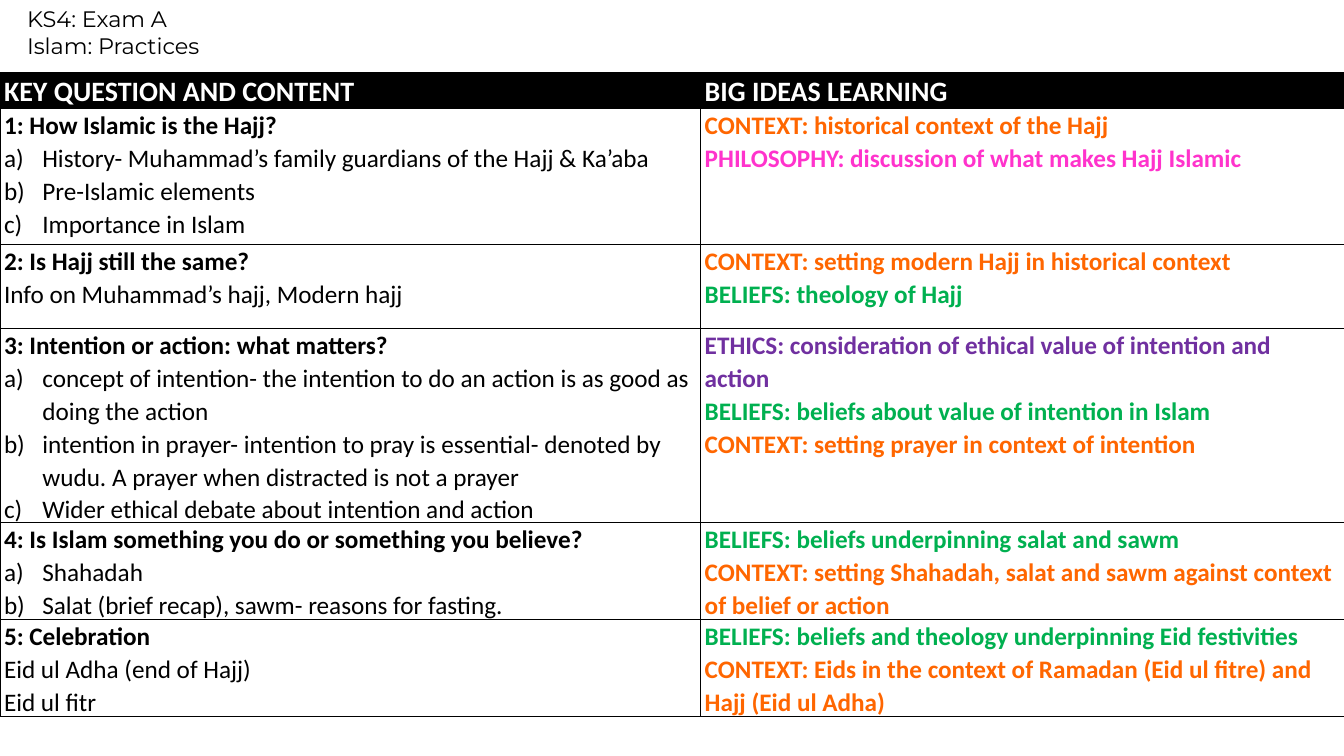
from lxml.etree import SubElement
from pptx import Presentation
from pptx.dml.color import RGBColor
from pptx.enum.text import MSO_ANCHOR, MSO_AUTO_SIZE
from pptx.oxml.ns import qn
from pptx.util import Inches, Pt

COLOURS = {
    "black": "000000",
    "white": "FFFFFF",
    "CONTEXT": "FF6600",
    "PHILOSOPHY": "FF33CC",
    "BELIEFS": "00B050",
    "ETHICS": "7030A0",
}
COLUMN_WIDTHS = (6.95, 6.38)
ROW_HEIGHTS = (0.35, 1.35, 0.83, 1.92, 0.96, 0.96)
HEADERS = ("KEY QUESTION AND CONTENT", "BIG IDEAS LEARNING")
LESSONS = [
    {
        "question": "1: How Islamic is the Hajj?",
        "lettered": True,
        "content": [
            "History- Muhammad’s family guardians of the Hajj & Ka’aba",
            "Pre-Islamic elements",
            "Importance in Islam",
        ],
        "ideas": [
            "CONTEXT: historical context of the Hajj",
            "PHILOSOPHY: discussion of what makes Hajj Islamic",
        ],
    },
    {
        "question": "2: Is Hajj still the same?",
        "lettered": False,
        "content": ["Info on Muhammad’s hajj, Modern hajj"],
        "ideas": [
            "CONTEXT: setting modern Hajj in historical context",
            "BELIEFS: theology of Hajj",
        ],
    },
    {
        "question": "3: Intention or action: what matters?",
        "lettered": True,
        "content": [
            "concept of intention- the intention to do an action is as good as doing the action",
            "intention in prayer- intention to pray is essential- denoted by wudu. "
            "A prayer when distracted is not a prayer",
            "Wider ethical debate about intention and action",
        ],
        "ideas": [
            "ETHICS: consideration of ethical value of intention and action",
            "BELIEFS: beliefs about value of intention in Islam",
            "CONTEXT: setting prayer in context of intention",
        ],
    },
    {
        "question": "4: Is Islam something you do or something you believe?",
        "lettered": True,
        "content": ["Shahadah", "Salat (brief recap), sawm- reasons for fasting."],
        "ideas": [
            "BELIEFS: beliefs underpinning salat and sawm",
            "CONTEXT: setting Shahadah, salat and sawm against context of belief or action",
        ],
    },
    {
        "question": "5: Celebration",
        "lettered": False,
        "content": ["Eid ul Adha (end of Hajj)", "Eid ul fitr"],
        "ideas": [
            "BELIEFS: beliefs and theology underpinning Eid festivities",
            "CONTEXT: Eids in the context of Ramadan (Eid ul fitre) and Hajj (Eid ul Adha)",
        ],
    },
]


def write(tf, text, size=18, font="Calibri", colour="black", bold=False, spacing=1.07, lettered=False):
    """Add one formatted paragraph, filling the first one if it is empty."""
    p = tf.paragraphs[0] if not tf.text else tf.add_paragraph()
    p.line_spacing = spacing
    if lettered:
        pPr = p._p.get_or_add_pPr()
        pPr.set("marL", str(Inches(0.38)))
        pPr.set("indent", str(-Inches(0.38)))
        SubElement(pPr, qn("a:buFont"), typeface="+mj-lt")
        SubElement(pPr, qn("a:buAutoNum"), type="alphaLcParenR")
    r = p.add_run()
    r.text = text
    r.font.size = Pt(size)
    r.font.name = font
    r.font.bold = bold
    r.font.color.rgb = RGBColor.from_string(COLOURS[colour])


def add_unit_label(slide, lines):
    """Add the unit label above the table."""
    box = slide.shapes.add_textbox(Inches(0.17), Inches(0), Inches(2.2), Inches(0.64))
    tf = box.text_frame
    tf.word_wrap = False
    tf.auto_size = MSO_AUTO_SIZE.SHAPE_TO_FIT_TEXT
    tf.vertical_anchor = MSO_ANCHOR.MIDDLE
    for line in lines:
        write(tf, line, size=16, font="Montserrat", spacing=1.0)


def style_cell(cell, fill=None):
    """Set a cell's margins, thin black borders and fill."""
    cell.margin_left = cell.margin_right = Inches(0.04)
    cell.margin_top = cell.margin_bottom = 0
    tcPr = cell._tc.get_or_add_tcPr()
    for side in ("lnL", "lnR", "lnT", "lnB"):
        ln = SubElement(tcPr, qn(f"a:{side}"), w=str(Pt(0.5)))
        SubElement(SubElement(ln, qn("a:solidFill")), qn("a:srgbClr"), val=COLOURS["black"])
    if fill:
        cell.fill.solid()
        cell.fill.fore_color.rgb = RGBColor.from_string(COLOURS[fill])
    else:
        cell.fill.background()


def add_lesson_table(slide):
    """Add the table of key questions and big ideas."""
    frame = slide.shapes.add_table(
        len(ROW_HEIGHTS), len(COLUMN_WIDTHS), Inches(0), Inches(0.72),
        Inches(sum(COLUMN_WIDTHS)), Inches(sum(ROW_HEIGHTS)),
    )
    table = frame.table
    table.horz_banding = False
    for column, width in zip(table.columns, COLUMN_WIDTHS):
        column.width = Inches(width)
    for row, height in zip(table.rows, ROW_HEIGHTS):
        row.height = Inches(height)
    for i, header in enumerate(HEADERS):
        cell = table.cell(0, i)
        style_cell(cell, fill="black")
        write(cell.text_frame, header, size=20, colour="white", bold=True)
    for i, lesson in enumerate(LESSONS, start=1):
        content, ideas = table.cell(i, 0), table.cell(i, 1)
        style_cell(content)
        style_cell(ideas)
        write(content.text_frame, lesson["question"], bold=True)
        for line in lesson["content"]:
            write(content.text_frame, line, lettered=lesson["lettered"])
        for idea in lesson["ideas"]:
            write(ideas.text_frame, idea, colour=idea.split(":")[0], bold=True)


def main():
    """Build the slide and save it."""
    prs = Presentation()
    prs.slide_width, prs.slide_height = Inches(13.33), Inches(7.5)
    slide = prs.slides.add_slide(prs.slide_layouts[6])
    add_unit_label(slide, ["KS4: Exam A", "Islam: Practices"])
    add_lesson_table(slide)
    prs.save("out.pptx")


if __name__ == "__main__":
    main()
